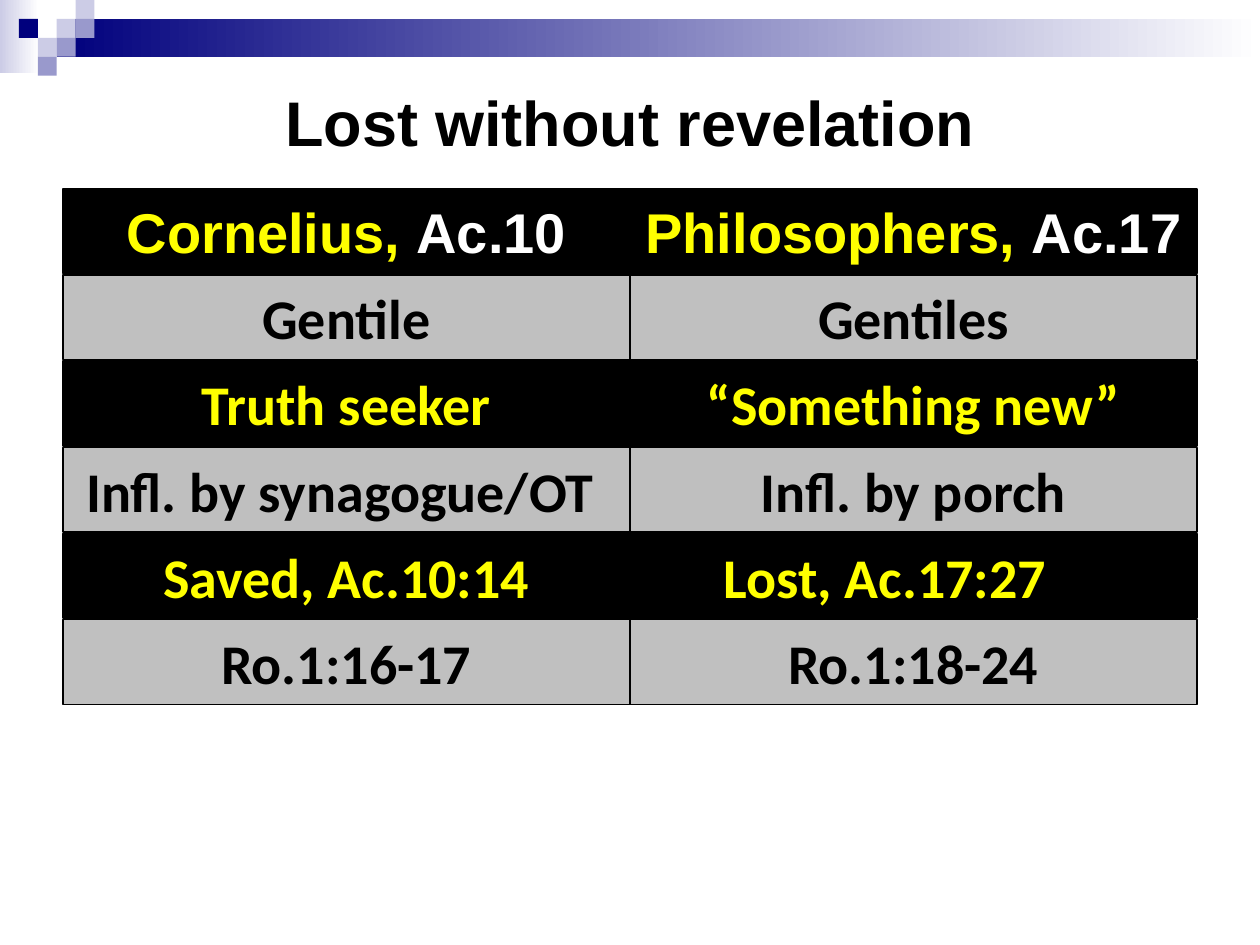
from dataclasses import dataclass

from lxml.etree import SubElement
from pptx import Presentation
from pptx.dml.color import RGBColor as RGB
from pptx.enum.shapes import MSO_SHAPE as SHAPE
from pptx.enum.text import MSO_ANCHOR as ANCHOR, PP_ALIGN as ALIGN
from pptx.oxml.ns import qn
from pptx.util import Inches, Pt


@dataclass(frozen=True)
class Theme:
    navy: str = "00007D"
    violet: str = "9999CC"
    lilac: str = "CCCCE6"
    white: str = "FFFFFF"
    black: str = "000000"
    yellow: str = "FFFF00"
    gray: str = "969696"
    light_gray: str = "BFBFBF"
    head_font: str = "Arial"
    body_font: str = "Calibri"
    title_size: int = 36
    cell_size: int = 32
    border: float = 0.75


T = Theme()


def add_rect(s, box, colors, alpha=None):
    """Plain rectangle: one colour is solid, two make a left-to-right gradient."""
    sp = s.shapes.add_shape(SHAPE.RECTANGLE, *map(Inches, box))
    sp.shadow.inherit = False
    sp.line.fill.background()
    if len(colors) == 2:
        sp.fill.gradient()
        sp.fill.gradient_angle = 0
        for stop, color in zip(sp.fill.gradient_stops, colors):
            stop.color.rgb = RGB.from_string(color)
    else:
        sp.fill.solid()
        sp.fill.fore_color.rgb = RGB.from_string(colors[0])
    if alpha is not None:
        rgb = sp._element.spPr.find(qn("a:solidFill")).find(qn("a:srgbClr"))
        SubElement(rgb, qn("a:alpha"), val=str(alpha * 1000))
    return sp


def write_centred(sp, runs, font, size):
    """Fill a shape with one centred bold line of (text, colour) runs."""
    tf = sp.text_frame
    tf.word_wrap = True
    tf.vertical_anchor = ANCHOR.MIDDLE
    p = tf.paragraphs[0]
    p.alignment = ALIGN.CENTER
    for text, color in runs:
        r = p.add_run()
        r.text = text
        r.font.name, r.font.size, r.font.bold = font, Pt(size), True
        r.font.color.rgb = RGB.from_string(color)
    return tf


def add_banner(s, box):
    """Gradient bar with a checker of small squares at its left end."""
    x, y, w, h = box
    unit = h / 4
    add_rect(s, (x, y, 0.31, 0.58), (T.lilac, T.white))
    add_rect(s, (x + 3 * unit, y + unit, w - 3 * unit, 2 * unit), (T.navy, T.white))
    squares = [(3, 1, T.lilac), (4, 0, T.lilac), (4, 1, T.violet), (2, 2, T.lilac),
               (1, 1, T.navy), (3, 2, T.violet), (2, 3, T.violet)]
    for col, row, color in squares:
        add_rect(s, (x + col * unit, y + row * unit, unit, unit), (color,))


def add_title(s, box, text):
    sp = s.shapes.add_textbox(*map(Inches, box))
    write_centred(sp, [(text, T.black)], T.head_font, T.title_size)


def add_comparison(s, box, rows):
    """Two-column grid of bordered cells; dark and light rows alternate."""
    x, y, w, h = box
    col_w, pitch = w / 2, h / len(rows)
    for i, (cells, fill, alpha) in enumerate(rows):
        font = T.body_font if i else T.head_font
        for j, (runs, extra_right) in enumerate(cells):
            cell = (x + j * col_w, y + i * pitch, col_w, pitch - 0.01)
            sp = add_rect(s, cell, (fill,), alpha)
            sp.line.color.rgb = RGB.from_string(T.black)
            sp.line.width = Pt(T.border)
            tf = write_centred(sp, runs, font, T.cell_size)
            tf.margin_right = Inches(0.1 + extra_right)


def cell(text, color, extra_right=0):
    return [(text, color)], extra_right


def heading(name, reference):
    return [(name, T.yellow), (reference, T.white)], 0


def main():
    prs = Presentation()
    prs.slide_width, prs.slide_height = Inches(10), Inches(7.5)
    s = prs.slides.add_slide(prs.slide_layouts[6])

    add_banner(s, (0, 0, 10, 0.6))
    add_title(s, (0.5, 0.5, 9, 0.92), "Lost without revelation")

    # Each row: left and right cell, fill, opacity in percent
    rows = [
        ((heading("Cornelius, ", "Ac.10"), heading("Philosophers, ", "Ac.17")),
         T.black, None),
        ((cell("Gentile", T.black), cell("Gentiles", T.black)), T.gray, 60),
        ((cell("Truth seeker", T.yellow), cell("“Something new”", T.yellow)),
         T.black, None),
        ((cell("Infl. by synagogue/OT", T.black, 0.1), cell("Infl. by porch", T.black)),
         T.light_gray, None),
        ((cell("Saved, Ac.10:14", T.yellow), cell("Lost, Ac.17:27", T.yellow, 0.45)),
         T.black, None),
        ((cell("Ro.1:16-17", T.black), cell("Ro.1:18-24", T.black)), T.gray, 60),
    ]
    add_comparison(s, (0.5, 1.5, 9, 4.1), rows)
    prs.save("out.pptx")


if __name__ == "__main__":
    main()
